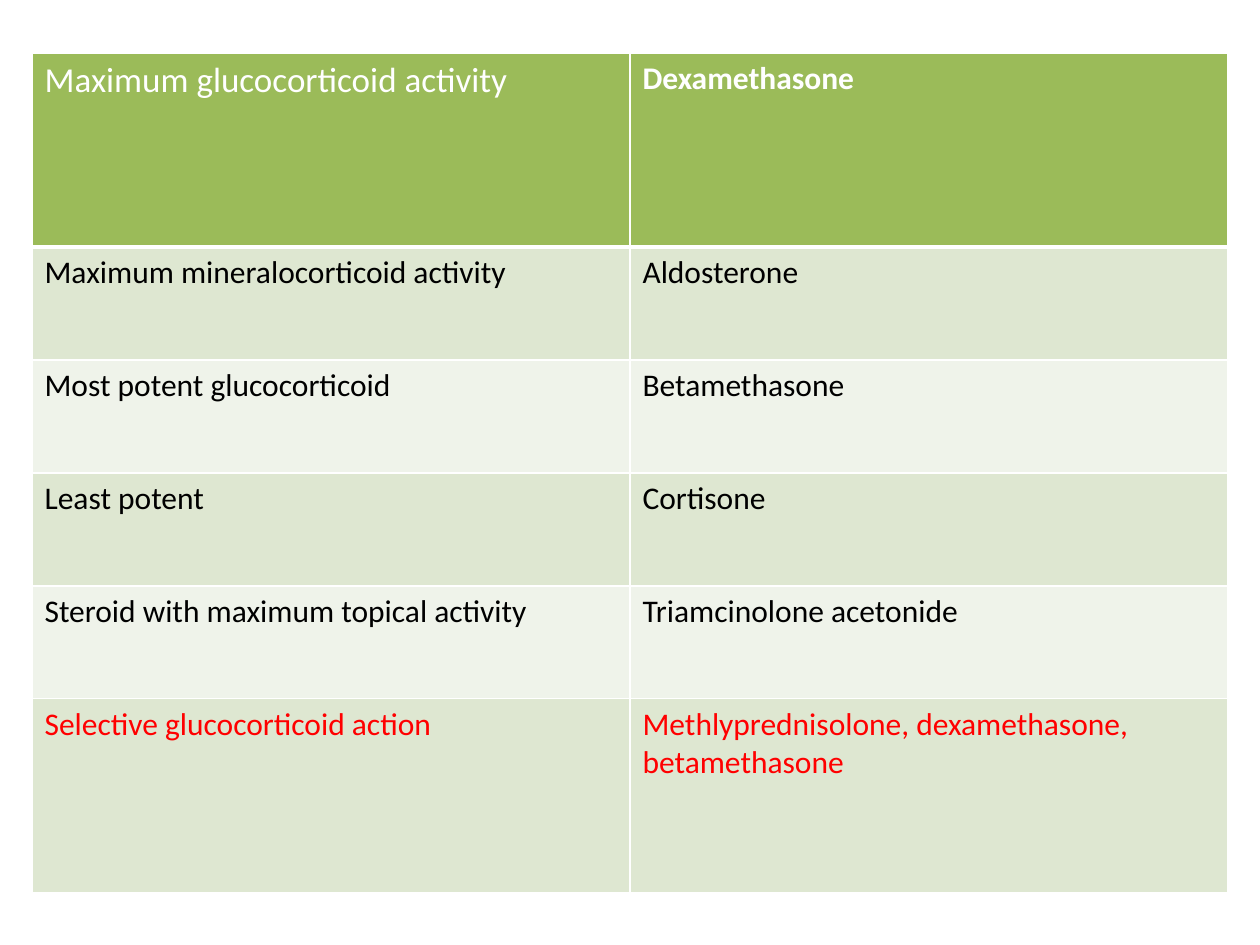
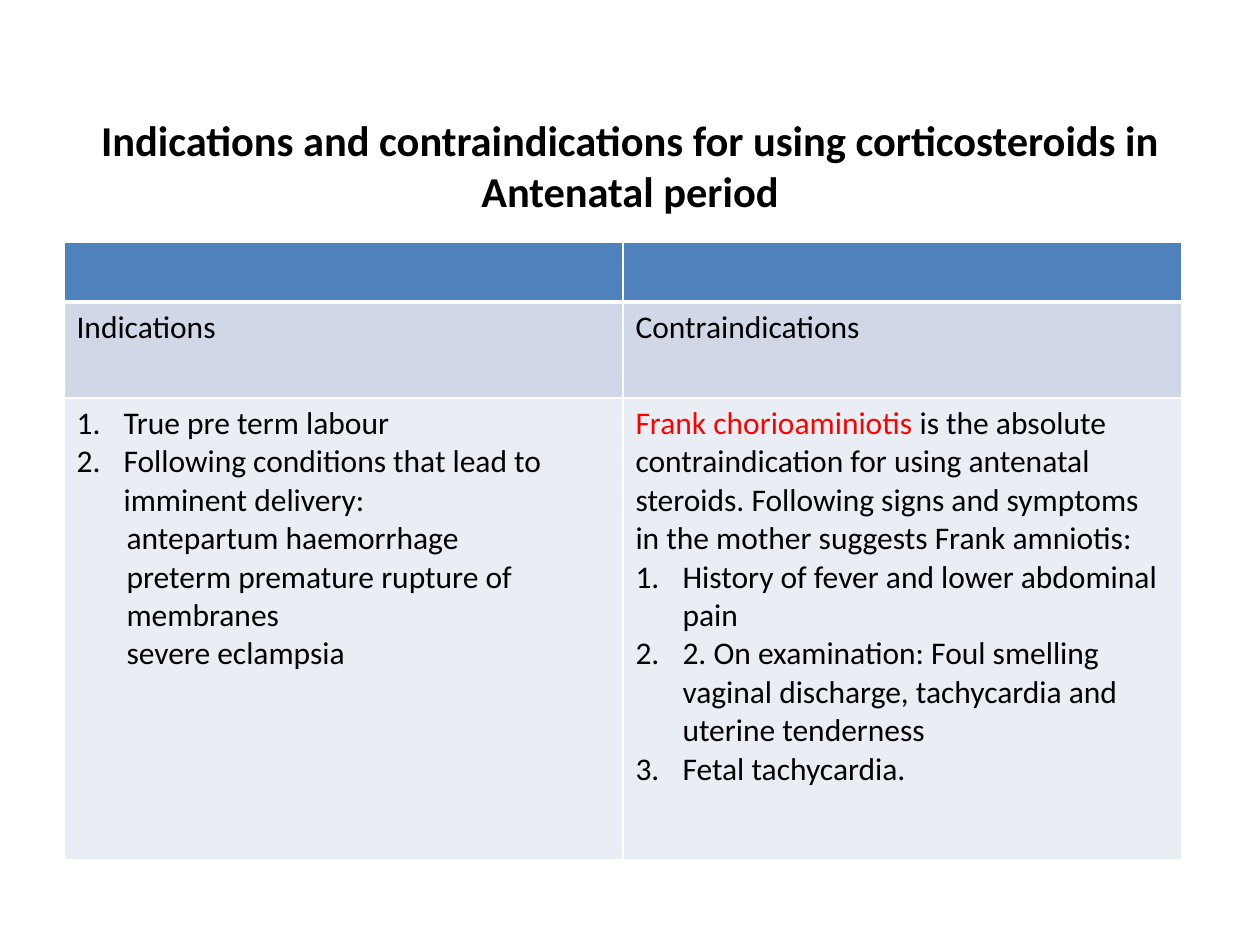
from lxml.etree import SubElement
from pptx import Presentation
from pptx.dml.color import RGBColor
from pptx.enum.text import MSO_ANCHOR, PP_ALIGN
from pptx.oxml import parse_xml
from pptx.oxml.ns import nsdecls, qn
from pptx.util import Emu, Pt

# Shared look
FONT = "Calibri"
BLACK = RGBColor(0x00, 0x00, 0x00)
WHITE = RGBColor(0xFF, 0xFF, 0xFF)
RED = RGBColor(0xFF, 0x00, 0x00)
GREEN = {"header": RGBColor(0x9B, 0xBB, 0x59),
         "bands": (RGBColor(0xDE, 0xE7, 0xD1), RGBColor(0xEF, 0xF3, 0xEA))}
BLUE = {"header": RGBColor(0x4F, 0x81, 0xBD),
        "bands": (RGBColor(0xD0, 0xD8, 0xE8), RGBColor(0xE9, 0xED, 0xF4))}
BODY = {"name": FONT, "size": Pt(18), "bold": False}
TITLE = {"name": FONT, "size": Pt(24.3), "bold": True}
THIN, THICK = Pt(1), Pt(3)
PLAIN, NUMBERED, INDENTED = "plain", "numbered", "indented"
INDENT = {NUMBERED: (47, -47), INDENTED: (50, 0)}

# Content: a cell is a list of paragraphs (kind, spans), a span is (text, colour, format)


def line(text, color=BLACK, kind=PLAIN, **look):
    return kind, [(text, color, look)]


ACTIVITY_ROWS = [
    [[line("Maximum glucocorticoid activity", WHITE, size=Pt(20))],
     [line("Dexamethasone", WHITE, bold=True)]],
    [[line("Maximum mineralocorticoid activity")], [line("Aldosterone")]],
    [[line("Most potent glucocorticoid")], [line("Betamethasone")]],
    [[line("Least potent")], [line("Cortisone")]],
    [[line("Steroid with maximum topical activity")], [line("Triamcinolone acetonide")]],
    [[line("Selective glucocorticoid action", RED)],
     [line("Methlyprednisolone, dexamethasone, betamethasone", RED)]],
]

ANTENATAL_TITLE = ("Indications and contraindications for using "
                   "corticosteroids in Antenatal period")
ANTENATAL_ROWS = [
    [[], []],
    [[line("Indications")], [line("Contraindications")]],
    [[line("True pre term labour", kind=NUMBERED),
      line("Following conditions that lead to imminent delivery:", kind=NUMBERED),
      line("antepartum haemorrhage", kind=INDENTED),
      line("preterm premature rupture of", kind=INDENTED),
      line("membranes", kind=INDENTED),
      line("severe eclampsia", kind=INDENTED)],
     [(PLAIN, [("Frank chorioaminiotis ", RED, {}),
               ("is the absolute contraindication for using antenatal steroids. "
                "Following signs and symptoms in the mother suggests Frank amniotis:",
                BLACK, {})]),
      line("History of fever and lower abdominal pain", kind=NUMBERED),
      line("2. On examination: Foul smelling vaginal discharge, tachycardia "
           "and uterine tenderness", kind=NUMBERED),
      line("Fetal tachycardia.", kind=NUMBERED)]],
]


# Helpers
def px(length):
    return Emu(round(length * 914400 / 126))


def add_span(para, text, color, look):
    span = para.add_run()
    span.text = text
    for name, value in look.items():
        setattr(span.font, name, value)
    span.font.color.rgb = color


def set_indent(para, kind):
    left, first = INDENT[kind]
    properties = para._p.get_or_add_pPr()
    properties.set("marL", str(px(left)))
    properties.set("indent", str(px(first)))
    if kind == NUMBERED:
        SubElement(properties, qn("a:buFont"), typeface="+mj-lt")
        SubElement(properties, qn("a:buAutoNum"), type="arabicPeriod")


def set_borders(cell, top, bottom):
    widths = {"lnL": THIN, "lnR": THIN, "lnT": top, "lnB": bottom}
    properties = cell._tc.get_or_add_tcPr()
    for place, (tag, width) in enumerate(widths.items()):
        properties.insert(place, parse_xml(
            f'<a:{tag} {nsdecls("a")} w="{width}"><a:solidFill>'
            f'<a:srgbClr val="{WHITE}"/></a:solidFill></a:{tag}>'))


def fill_cell(cell, paragraphs):
    frame = cell.text_frame
    for index, (kind, spans) in enumerate(paragraphs):
        para = frame.add_paragraph() if index else frame.paragraphs[0]
        if kind in INDENT:
            set_indent(para, kind)
        for text, color, look in spans:
            add_span(para, text, color, BODY | look)


def add_grid(page, rows, left, top, column_width, heights, theme):
    columns = len(rows[0])
    table = page.shapes.add_table(len(rows), columns, px(left), px(top),
                                  px(column_width * columns), px(sum(heights))).table
    table.first_row = table.horz_banding = False
    for column in table.columns:
        column.width = px(column_width)
    for r, (cells, height) in enumerate(zip(rows, heights)):
        table.rows[r].height = px(height)
        for c, paragraphs in enumerate(cells):
            cell = table.cell(r, c)
            cell.fill.solid()
            cell.fill.fore_color.rgb = theme["bands"][(r - 1) % 2] if r else theme["header"]
            set_borders(cell, THICK if r == 1 else THIN, THICK if r == 0 else THIN)
            fill_cell(cell, paragraphs)


def add_title(page, text):
    box = page.shapes.title
    places = {"left": px(63), "top": px(0), "width": px(1134), "height": px(242)}
    for name, value in places.items():
        setattr(box, name, value)
    frame = box.text_frame
    frame.vertical_anchor = MSO_ANCHOR.BOTTOM
    frame.margin_bottom = px(26)
    para = frame.paragraphs[0]
    para.alignment = PP_ALIGN.CENTER
    add_span(para, text, BLACK, TITLE)


def main():
    deck = Presentation()
    deck.slide_width, deck.slide_height = px(1260), px(945)
    title_only, blank = deck.slide_layouts[5], deck.slide_layouts[6]

    # Steroid activity
    page = deck.slides.add_slide(blank)
    add_grid(page, ACTIVITY_ROWS, 32, 53, 598, [194] + [113] * 4 + [194], GREEN)

    # Antenatal use
    page = deck.slides.add_slide(title_only)
    add_title(page, ANTENATAL_TITLE)
    add_grid(page, ANTENATAL_ROWS, 64, 242, 559, [60, 96, 462], BLUE)

    deck.save("out.pptx")


if __name__ == "__main__":
    main()
